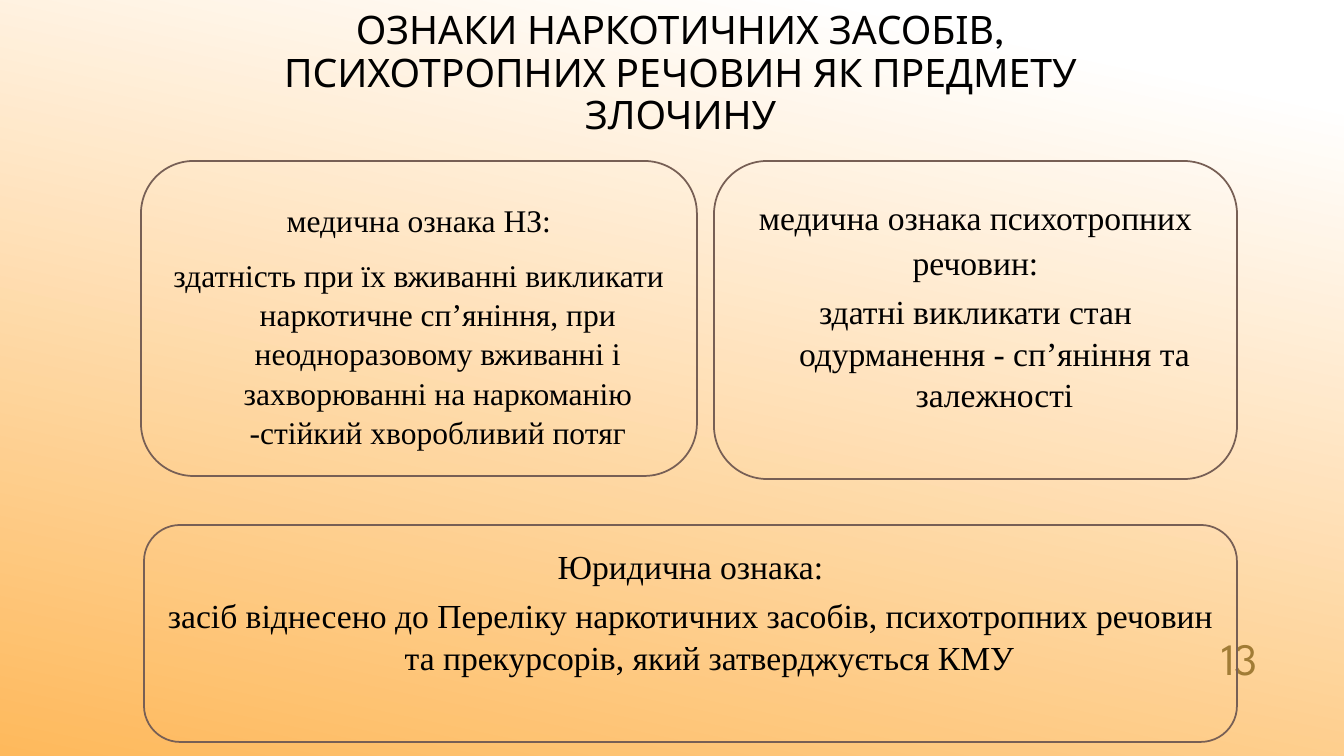
from pptx import Presentation
from pptx.dml.color import RGBColor
from pptx.enum.shapes import MSO_SHAPE as Shape
from pptx.enum.text import MSO_ANCHOR as Anchor, MSO_AUTO_SIZE as AutoSize, PP_ALIGN as Align
from pptx.util import Emu, Pt

HEADING_FONT = "League Spartan"
BODY_FONT = "Times New Roman"


def px(length):
    return Emu(round(length * 914400 / 100.8))


def color(value):
    return RGBColor.from_string(value)


class SlideBuilder:
    """Holds the style and the current slide."""

    ink, outline, accent = "000000", "775F55", "A17C36"

    def __init__(self, presentation):
        self.slide = presentation.slides.add_slide(presentation.slide_layouts[5])

    def background(self, stops, angle):
        fill = self.slide.background.fill
        fill.gradient()
        fill.gradient_angle = angle
        for stop, (position, value) in zip(fill.gradient_stops, stops):
            stop.position = position
            stop.color.rgb = color(value)

    def frame(self, shape, anchor, **formats):
        text_frame = shape.text_frame
        settings = {"word_wrap": True, "auto_size": AutoSize.NONE,
                    "vertical_anchor": anchor, **formats}
        for name, value in settings.items():
            setattr(text_frame, name, value)
        return text_frame

    def add_text(self, paragraph, text, size, font, ink, **formats):
        for name, value in {"alignment": Align.CENTER, **formats}.items():
            setattr(paragraph, name, value)
        run = paragraph.add_run()
        run.text = text
        for name, value in {"size": Pt(size), "name": font, "bold": False}.items():
            setattr(run.font, name, value)
        run.font.color.rgb = color(ink)

    def title(self, text, left, top, width, height):
        shape = self.slide.shapes.title
        box = {"left": left, "top": top, "width": width, "height": height}
        for name, value in box.items():
            setattr(shape, name, px(value))
        text_frame = self.frame(shape, Anchor.MIDDLE)
        self.add_text(text_frame.paragraphs[0], text, 28, HEADING_FONT, self.ink,
                      line_spacing=0.9)

    def number(self, text, *box):
        shape = self.slide.shapes.add_textbox(*map(px, box))
        text_frame = self.frame(shape, Anchor.BOTTOM)
        self.add_text(text_frame.paragraphs[0], text, 32, HEADING_FONT, self.accent,
                      alignment=Align.RIGHT)

    def card(self, heading, body, box, size, inset, gap, heading_spacing=1.04):
        shape = self.slide.shapes.add_shape(Shape.ROUNDED_RECTANGLE, *map(px, box))
        shape.shadow.inherit = False
        shape.fill.background()
        shape.line.color.rgb = color(self.outline)
        shape.line.width = Pt(1.25)
        text_frame = self.frame(shape, Anchor.TOP, margin_top=px(inset))
        self.add_text(text_frame.paragraphs[0], heading, size, BODY_FONT, self.ink,
                      line_spacing=heading_spacing)
        # The body hangs: its later lines are centred in a narrower column
        paragraph = text_frame.add_paragraph()
        self.add_text(paragraph, body, size, BODY_FONT, self.ink,
                      line_spacing=1.04, space_before=Pt(gap))
        properties = paragraph._p.get_or_add_pPr()
        properties.set("marL", str(px(38)))
        properties.set("indent", str(-px(38)))


def main():
    presentation = Presentation()
    presentation.slide_width, presentation.slide_height = px(1344), px(756)
    builder = SlideBuilder(presentation)
    builder.background([(0.1, "FFFFFF"), (1, "FEB95C")], angle=258)

    # Title
    builder.title("ОЗНАКИ НАРКОТИЧНИХ ЗАСОБІВ, ПСИХОТРОПНИХ РЕЧОВИН ЯК ПРЕДМЕТУ ЗЛОЧИНУ",
                  202, 23, 957, 103)

    # Medical features
    builder.card("медична ознака НЗ:",
                 "здатність при їх вживанні викликати наркотичне сп’яніння, при "
                 "неодноразовому вживанні і захворюванні на наркоманію "
                 "-стійкий хворобливий потяг",
                 (141, 161, 556, 315), size=22.5, inset=23, gap=11)
    builder.card("медична ознака психотропних речовин:",
                 "здатні викликати стан одурманення - сп’яніння та залежності",
                 (714, 161, 523, 318), size=24, inset=16, gap=5, heading_spacing=1.11)

    # Slide number
    builder.number("13", 1142, 615, 126, 74)

    # Legal feature
    builder.card("Юридична ознака:",
                 "засіб віднесено до Переліку наркотичних засобів, психотропних "
                 "речовин та прекурсорів, який затверджується КМУ",
                 (144, 525, 1093, 217), size=24, inset=9, gap=5)

    presentation.save("out.pptx")


if __name__ == "__main__":
    main()
